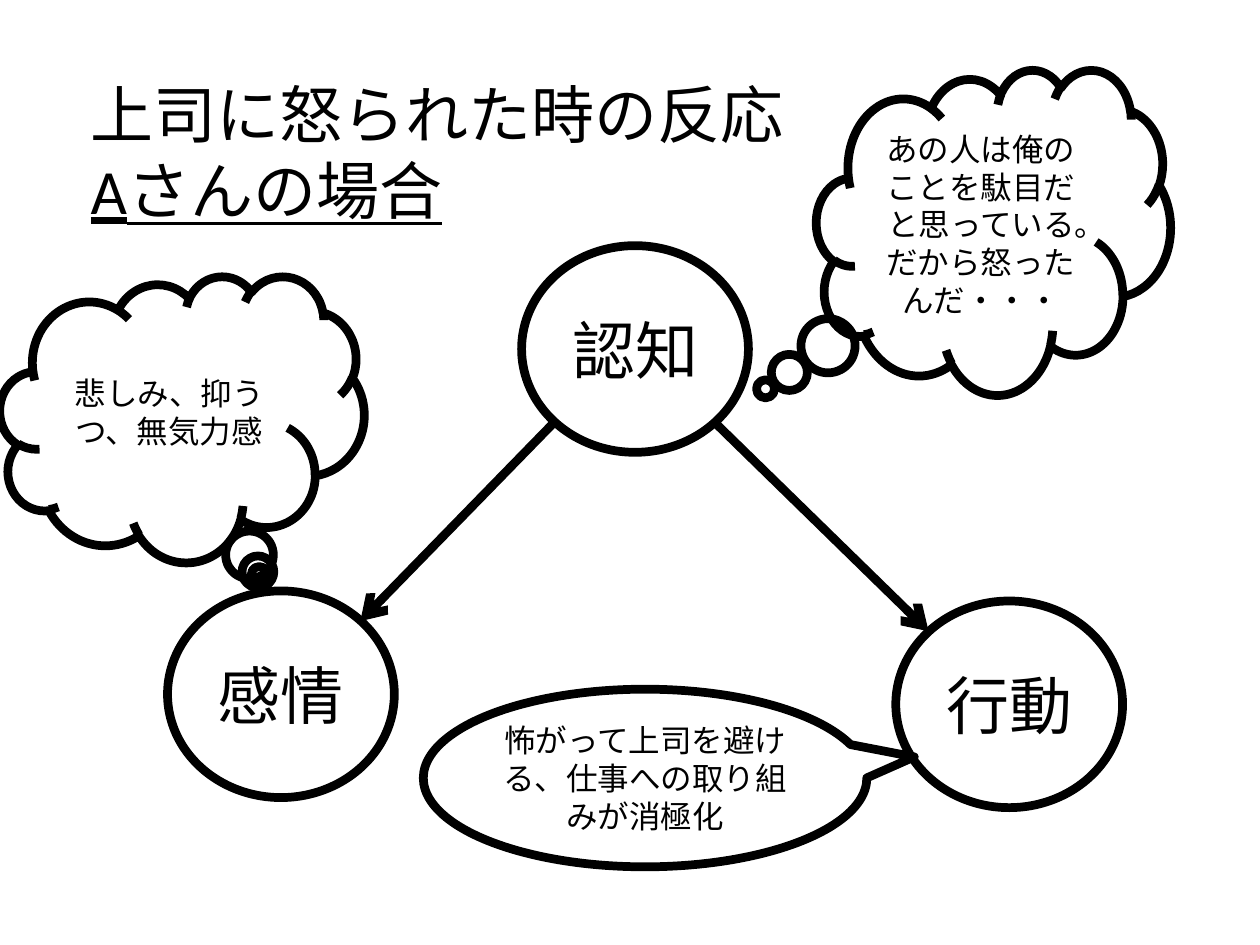
from dataclasses import dataclass

from lxml.etree import SubElement
from pptx import Presentation
from pptx.dml.color import RGBColor as Rgb
from pptx.enum.shapes import MSO_CONNECTOR as Link, MSO_SHAPE as Form
from pptx.enum.text import MSO_ANCHOR as Anchor, MSO_AUTO_SIZE as Fit, PP_ALIGN as Align
from pptx.oxml.ns import qn
from pptx.slide import Slide
from pptx.text.text import TextFrame as Frame
from pptx.util import Inches, Pt

COLORS = {"ink": "000000"}
FONT = "Calibri"
LINE = 5
NODE_W, NODE_H = 1.8, 1.64


@dataclass
class Bubble:
    text: str
    left: float
    top: float
    width: float = NODE_W
    height: float = NODE_H
    form: Form = Form.OVAL
    size: int = 36
    tip: tuple[float, ...] = ()


@dataclass
class Arrow:
    start: tuple[float, float]
    end: tuple[float, float]


NODES = [
    Bubble("認知", 4.14, 1.95),
    Bubble("感情", 1.33, 4.69),
    Bubble("行動", 7.11, 4.77),
]
ARROWS = [
    Arrow((4.4, 3.35), (2.86, 4.93)),
    Arrow((5.67, 3.35), (7.37, 5.01)),
]
THOUGHTS = [
    Bubble("あの人は俺のことを駄目だと思っている。だから怒ったんだ・・・",
           6.48, 0.55, 2.81, 2.58, Form.CLOUD_CALLOUT, 18, (-0.644, 0.483)),
    Bubble("悲しみ、抑うつ、無気力感",
           0, 2.19, 2.89, 2.27, Form.CLOUD_CALLOUT, 18, (0.212, 0.544)),
    Bubble("怖がって上司を避ける、仕事への取り組みが消極化",
           3.36, 5.47, 3.52, 1.41, Form.OVAL_CALLOUT, 18, (0.607, -0.119)),
]


def ink() -> Rgb:
    return Rgb.from_string(COLORS["ink"])


def style_text(frame: Frame, size: int, align: Align, anchor: Anchor) -> None:
    frame.word_wrap = True
    frame.auto_size = Fit.NONE
    frame.vertical_anchor = anchor
    for para in frame.paragraphs:
        para.alignment = align
        para.font.name = FONT
        para.font.size = Pt(size)
        para.font.color.rgb = ink()


def add_title(slide: Slide) -> None:
    title = slide.shapes.title
    title.left, title.top = Inches(0.62), Inches(0.55)
    title.width, title.height = Inches(8.59), Inches(1.31)
    frame = title.text_frame
    frame.text = "上司に怒られた時の反応\nAさんの場合"
    style_text(frame, 36, Align.LEFT, Anchor.TOP)
    frame.paragraphs[1].font.underline = True


def add_bubble(slide: Slide, item: Bubble) -> None:
    shape = slide.shapes.add_shape(
        item.form, Inches(item.left), Inches(item.top),
        Inches(item.width), Inches(item.height))
    shape.shadow.inherit = False
    shape.fill.background()
    shape.line.color.rgb = ink()
    shape.line.width = Pt(LINE)
    for index, value in enumerate(item.tip):
        shape.adjustments[index] = value
    shape.text_frame.text = item.text
    style_text(shape.text_frame, item.size, Align.CENTER, Anchor.MIDDLE)


def add_arrow(slide: Slide, item: Arrow) -> None:
    points = [Inches(value) for value in item.start + item.end]
    line = slide.shapes.add_connector(Link.STRAIGHT, *points)
    line.line.color.rgb = ink()
    line.line.width = Pt(LINE)
    props = line.element.spPr
    SubElement(props.find(qn("a:ln")), qn("a:tailEnd"), type="arrow")
    SubElement(props, qn("a:effectLst"))


def main() -> None:
    deck = Presentation()
    deck.slide_width, deck.slide_height = Inches(10), Inches(7.5)
    slide = deck.slides.add_slide(deck.slide_layouts.get_by_name("Title Only"))
    for node in NODES:
        add_bubble(slide, node)
    for arrow in ARROWS:
        add_arrow(slide, arrow)
    add_title(slide)
    for thought in THOUGHTS:
        add_bubble(slide, thought)
    deck.save("out.pptx")


if __name__ == "__main__":
    main()
